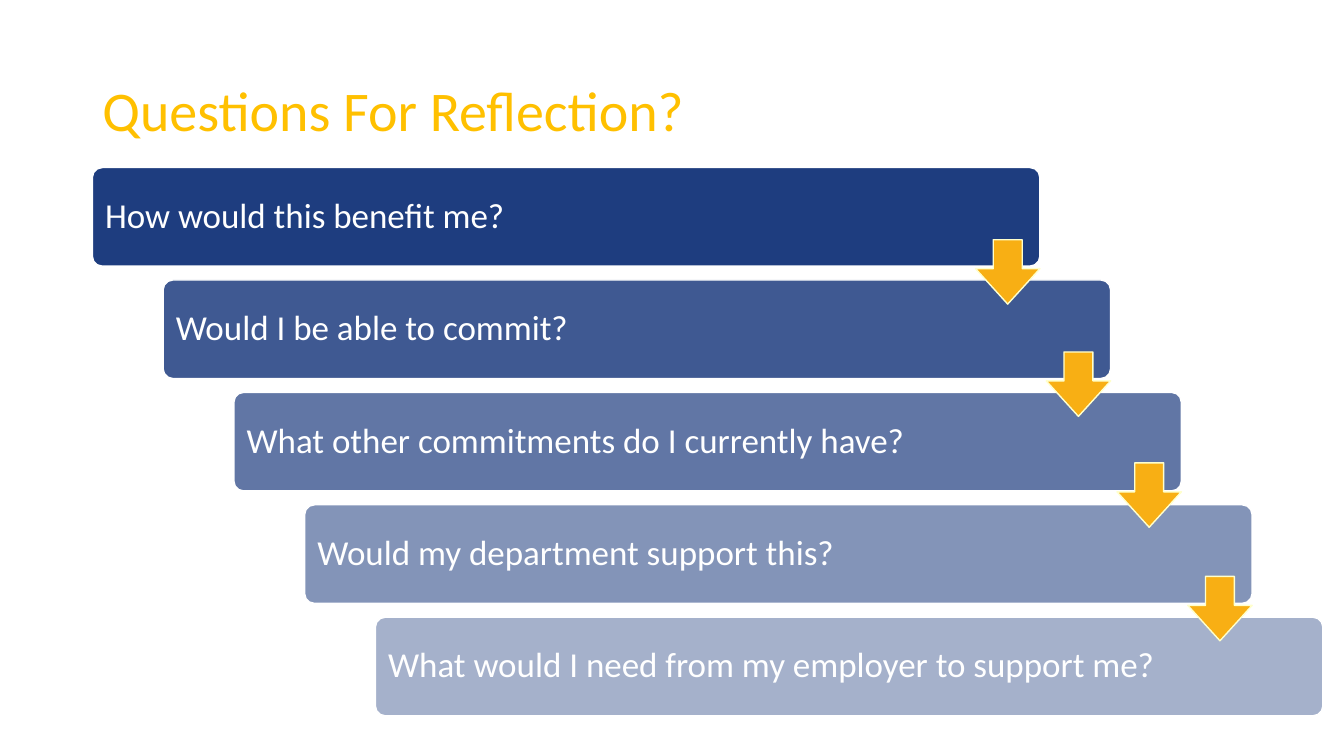
from dataclasses import dataclass

from lxml import etree
from pptx import Presentation
from pptx.dml.color import RGBColor
from pptx.enum import shapes, text
from pptx.oxml import ns
from pptx.util import Pt

FONT = "Calibri"
NAVY, AMBER, GOLD, CREAM, WHITE = "1E3D7F", "F8AF14", "FFC000", "FFFFCC", "FFFFFF"
BAR_LEFT, BAR_TOP, BAR_WIDTH, BAR_HEIGHT = 66, 119.7, 676.8, 70.4
STEP_X, STEP_Y = 50.54, 80.3
ARROW_SIZE = 46


@dataclass
class Step:
    question: str
    opacity: int
    arrow_top: float | None = None


STEPS = [
    Step("How would this benefit me?", 100, 171.2),
    Step("Would I be able to commit?", 85, 251.4),
    Step("What other commitments do I currently have?", 70, 330.6),
    Step("Would my department support this?", 55, 411.7),
    Step("What would I need from my employer to support me?", 40),
]


def rgb(color: str) -> RGBColor:
    return RGBColor.from_string(color)


def write(tf, words: str, size: float, color: str) -> None:
    tf.word_wrap = True
    tf.auto_size = text.MSO_AUTO_SIZE.NONE
    tf.vertical_anchor = text.MSO_ANCHOR.MIDDLE
    p = tf.paragraphs[0]
    p.text = words
    p.alignment = text.PP_ALIGN.LEFT
    p.line_spacing = 0.9
    p.font.name = FONT
    p.font.size = Pt(size)
    p.font.color.rgb = rgb(color)


def add_block(s, kind, left: float, top: float, width: float, height: float,
              fill: str, line: str, adjustments: list[float]):
    """Add a flat preset shape with a one-point outline."""
    sp = s.shapes.add_shape(kind, Pt(left), Pt(top), Pt(width), Pt(height))
    sp.shadow.inherit = False
    sp.fill.solid()
    sp.fill.fore_color.rgb = rgb(fill)
    sp.line.color.rgb = rgb(line)
    sp.line.width = Pt(1)
    for i, value in enumerate(adjustments):
        sp.adjustments[i] = value
    return sp


def set_opacity(sp, percent: int) -> None:
    color = sp._element.spPr.find(ns.qn("a:solidFill")).find(ns.qn("a:srgbClr"))
    etree.SubElement(color, ns.qn("a:alpha")).set("val", str(percent * 1000))


def add_bar(s, step: Step, left: float, top: float) -> None:
    sp = add_block(s, shapes.MSO_SHAPE.ROUNDED_RECTANGLE, left, top,
                   BAR_WIDTH, BAR_HEIGHT, NAVY, WHITE, [0.1])
    if step.opacity < 100:
        set_opacity(sp, step.opacity)
    tf = sp.text_frame
    tf.margin_left = Pt(7.2)
    tf.margin_right = Pt(80)
    write(tf, step.question, 25, WHITE)


def main() -> None:
    prs = Presentation()
    prs.slide_width, prs.slide_height = Pt(960), Pt(540)
    s = prs.slides.add_slide(prs.slide_layouts[5])

    title = s.shapes.title
    title.left, title.top, title.width, title.height = Pt(66), Pt(28.8), Pt(828), Pt(104.4)
    write(title.text_frame, "Questions For Reflection?", 40, GOLD)

    for i, step in enumerate(STEPS):
        add_bar(s, step, BAR_LEFT + i * STEP_X, BAR_TOP + i * STEP_Y)

    for i, step in enumerate(STEPS):
        if step.arrow_top is not None:
            right = BAR_LEFT + i * STEP_X + BAR_WIDTH
            add_block(s, shapes.MSO_SHAPE.DOWN_ARROW, right - ARROW_SIZE, step.arrow_top,
                      ARROW_SIZE, ARROW_SIZE, AMBER, CREAM, [0.45, 0.55])

    prs.save("out.pptx")


if __name__ == "__main__":
    main()
